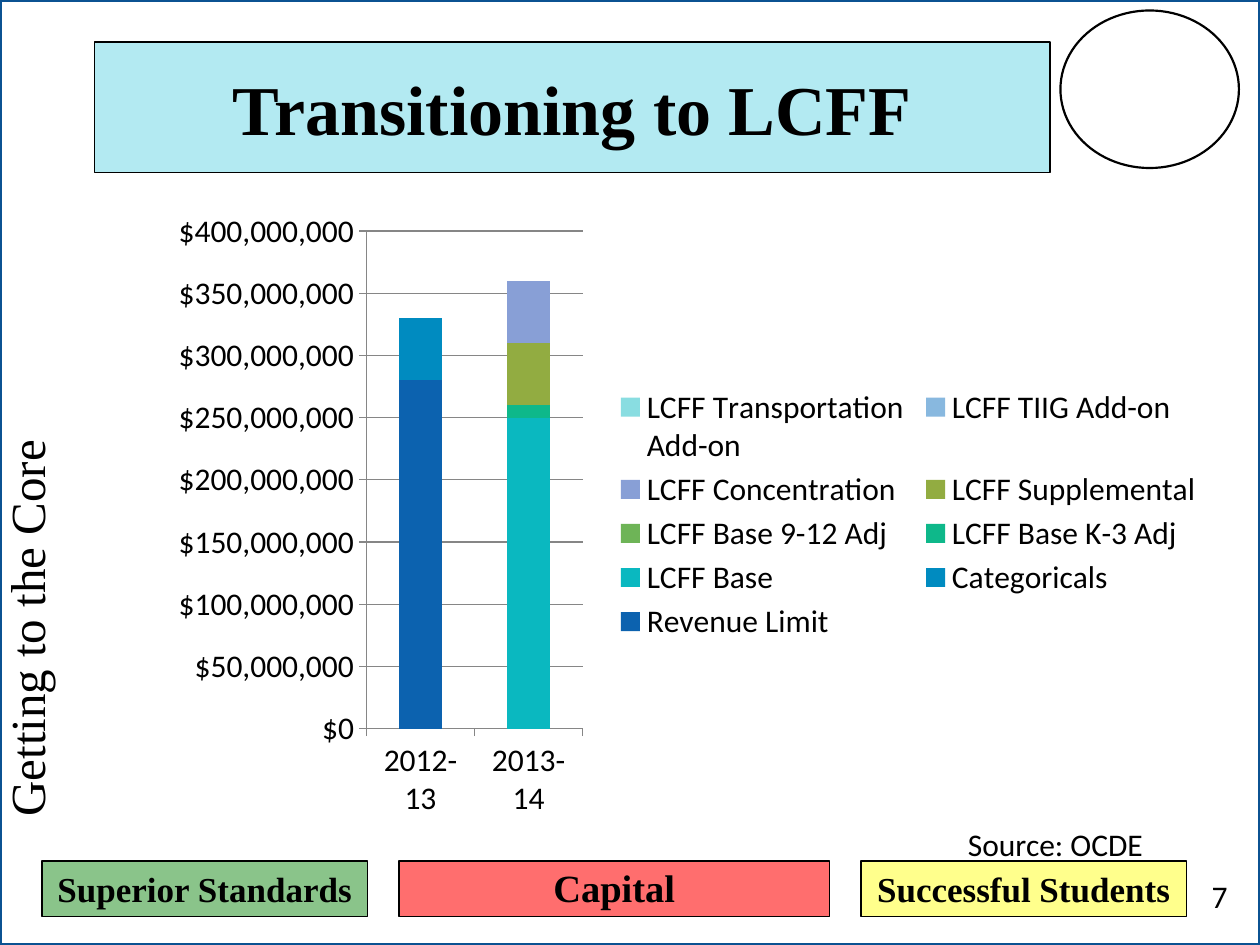
"""Build the school funding slide with a stacked column chart."""
from lxml import etree
from pptx import Presentation, util as u
from pptx.chart.data import CategoryChartData
from pptx.dml.color import RGBColor
from pptx.enum import chart as charts, shapes, text
from pptx.oxml import parse_xml
from pptx.oxml.ns import nsdecls, qn

SERIES = [
    ("Revenue Limit", (280e6, None), "0C62AF"),
    ("Categoricals", (50e6, None), "008BC0"),
    ("LCFF Base", (None, 250e6), "0AB8C0"),
    ("LCFF Base K-3 Adj", (None, 10e6), "0EB88A"),
    ("LCFF Base 9-12 Adj", (None, 0), "6EB457"),
    ("LCFF Supplemental", (None, 50e6), "92AC41"),
    ("LCFF Concentration", (None, 50e6), "889FD6"),
    ("LCFF TIIG Add-on", (0, 0), "88B8DF"),
    ("LCFF Transportation\nAdd-on", (0, 0), "89DDE1"),
]


def color(value):
    return RGBColor.from_string(value)


def write(shape, words, size=18, font="Calibri", bold=False, align="LEFT", anchor="TOP", wrap=True):
    frame = shape.text_frame
    frame.word_wrap = wrap
    frame.vertical_anchor = getattr(text.MSO_ANCHOR, anchor)
    paragraph = frame.paragraphs[0]
    paragraph.alignment = getattr(text.PP_ALIGN, align)
    run = paragraph.add_run()
    run.text = words
    run.font.name, run.font.size, run.font.bold = font, u.Pt(size), bold
    run.font.color.rgb = color("000000")
    return shape


def place_inside_chart(element, before, x, y, w, h, inner=False):
    for old in element.findall(qn("c:layout")):
        element.remove(old)
    target = '<c:layoutTarget val="inner"/>' if inner else ""
    sizes = "".join(f'<c:{tag} val="{value}"/>' for tag, value in zip("xywh", (x, y, w, h)))
    layout = parse_xml(
        f'<c:layout {nsdecls("c")}><c:manualLayout>{target}<c:xMode val="edge"/>'
        f'<c:yMode val="edge"/>{sizes}</c:manualLayout></c:layout>')
    if before is None:
        element.insert(0, layout)
    else:
        before.addprevious(layout)


class Deck:
    """Draws elements on a slide with a grid of 120 columns and 90 rows."""

    columns, rows = 120, 90
    serif = "Times New Roman"

    def __init__(self):
        self.presentation = Presentation()
        self.presentation.slide_width = u.Inches(10)
        self.presentation.slide_height = u.Inches(7.5)
        self.slide = self.presentation.slides.add_slide(self.presentation.slide_layouts[6])

    def box(self, left, top, width, height):
        column = self.presentation.slide_width / self.columns
        row = self.presentation.slide_height / self.rows
        return [round(n) for n in (left * column, top * row, width * column, height * row)]

    def panel(self, at, fill, line="000000", weight=0.75, alpha=None, kind="RECTANGLE"):
        shape = self.slide.shapes.add_shape(getattr(shapes.MSO_SHAPE, kind), *self.box(*at))
        shape.shadow.inherit = False
        shape.fill.solid()
        shape.fill.fore_color.rgb = color(fill)
        shape.line.color.rgb = color(line)
        shape.line.width = u.Pt(weight)
        if alpha is not None:
            rgb = shape._element.spPr.find(qn("a:solidFill")).find(qn("a:srgbClr"))
            etree.SubElement(rgb, qn("a:alpha")).set("val", str(alpha * 1000))
        return shape

    def label(self, at, words, rotation=0, **style):
        shape = self.slide.shapes.add_textbox(*self.box(*at))
        shape.rotation = rotation
        return write(shape, words, **style)

    def stacked_columns(self, at, categories, series):
        data = CategoryChartData(number_format='"$"#,##0')
        data.categories = categories
        for name, values, _ in series:
            data.add_series(name, values)
        chart = self.slide.shapes.add_chart(
            charts.XL_CHART_TYPE.COLUMN_STACKED, *self.box(*at), data).chart
        chart.has_title = False
        chart.font.name, chart.font.size = "Calibri", u.Pt(18)
        chart.font.color.rgb = color("000000")
        plot = chart.plots[0]
        plot.gap_width, plot.overlap, plot.vary_by_categories = 150, 100, False
        for drawn, (_, _, fill) in zip(plot.series, series):
            drawn.format.fill.solid()
            drawn.format.fill.fore_color.rgb = color(fill)
        axis = chart.value_axis
        axis.minimum_scale, axis.maximum_scale, axis.major_unit = 0, 400e6, 50e6
        axis.has_major_gridlines = True
        axis.tick_labels.number_format = '"$"#,##0'
        axis.tick_labels.number_format_is_linked = False
        for part in (axis, chart.category_axis, axis.major_gridlines):
            part.format.line.color.rgb = color("868686")
            part.format.line.width = u.Pt(0.7)
        for part in (axis, chart.category_axis):
            part.major_tick_mark = charts.XL_TICK_MARK.OUTSIDE
        chart.has_legend = True
        legend = chart.legend
        legend.position = charts.XL_LEGEND_POSITION.RIGHT
        legend.include_in_layout = False
        place_inside_chart(chart._chartSpace.chart.plotArea, None, 0.199, 0.05, 0.206, 0.79, inner=True)
        place_inside_chart(legend._element, legend._element.find(qn("c:overlay")), 0.43, 0.29, 0.57, 0.42)


def main():
    deck = Deck()
    heading = {"font": deck.serif, "bold": True, "align": "CENTER"}
    deck.panel((0, 0, deck.columns, deck.rows), "FFFFFF", line="0B5292", weight=2)
    deck.label((-15.2, 52.2, 41, 12.5), "Getting to the Core", rotation=270, size=28, font=deck.serif)
    deck.panel((101, 1, 17, 15), "FFFFFF", weight=1.25, kind="OVAL")
    for left, width, fill, alpha, words in (
            (4, 31, "008000", 46, "Superior Standards"),
            (38, 41, "FF0000", 57, None),
            (82, 31, "FFFF05", 46, "Successful Students")):
        panel = deck.panel((left, 82, width, 5.3), fill, alpha=alpha)
        if words:
            write(panel, words, size=20, anchor="MIDDLE", wrap=False, **heading)
    title = deck.panel((9, 4, 91, 12.4), "B3EAF2")
    write(title, "Transitioning to LCFF", size=40, anchor="MIDDLE", **heading)
    deck.stacked_columns((15, 19, 100, 60), ["2012-13", "2013-14"], SERIES)
    deck.label((41, 81.7, 35, 5.6), "Capital", size=22, **heading)
    deck.label((93.4, 82.9, 24.7, 4.4), "7", align="RIGHT")
    deck.label((91, 78, 27, 4.8), "Source: OCDE")
    deck.presentation.save("out.pptx")


if __name__ == "__main__":
    main()
